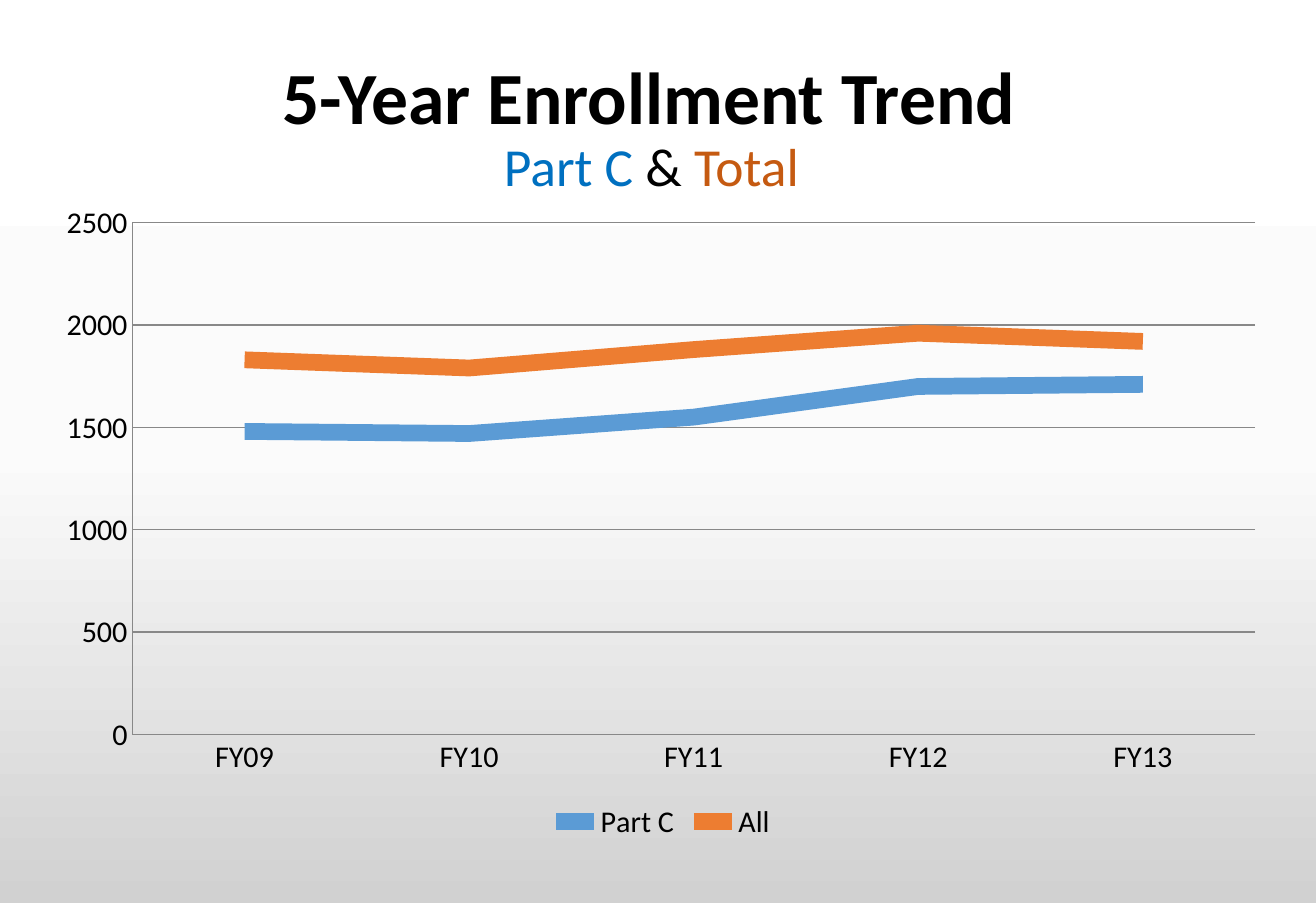
from copy import deepcopy

from lxml.etree import SubElement
from pptx import Presentation
from pptx.chart.data import CategoryChartData
from pptx.dml.color import RGBColor
from pptx.enum.chart import XL_CHART_TYPE, XL_LEGEND_POSITION, XL_MARKER_STYLE, XL_TICK_MARK
from pptx.enum.text import MSO_ANCHOR, MSO_AUTO_SIZE, PP_ALIGN
from pptx.oxml import parse_xml
from pptx.oxml.ns import nsdecls, qn
from pptx.util import Pt

PX = 7595
FONT = "Calibri"
BLACK = RGBColor(0x00, 0x00, 0x00)
GRAY = RGBColor(0x88, 0x88, 0x88)
PART_C_TEXT = RGBColor(0x00, 0x70, 0xC0)
TOTAL_TEXT = RGBColor(0xC5, 0x5A, 0x11)
BLUE = RGBColor(0x5B, 0x9B, 0xD5)
ORANGE = RGBColor(0xED, 0x7D, 0x31)
BACKGROUND = [
    (0, RGBColor(0xFF, 0xFF, 0xFF)),
    (0.5, RGBColor(0xFB, 0xFB, 0xFB)),
    (1, RGBColor(0xD1, 0xD1, 0xD1)),
]
YEARS = ["FY09", "FY10", "FY11", "FY12", "FY13"]
SERIES = [
    ("Part C", [1480, 1470, 1550, 1700, 1710], BLUE),
    ("All", [1830, 1790, 1880, 1960, 1920], ORANGE),
]
TITLE_RUNS = [
    ("5-Year Enrollment Trend ", 44, True, BLACK),
    ("Part C ", 32, False, PART_C_TEXT),
    ("&", 32, False, BLACK),
    (" Total ", 32, False, TOTAL_TEXT),
]


def px(*lengths):
    """Turn pixel lengths into EMU."""
    return [n * PX for n in lengths]


def set_background(s):
    """Fill the slide with a vertical gradient."""
    fill = s.background.fill
    fill.gradient()
    fill.gradient_angle = 270
    stops = s.element.find(".//" + qn("a:gsLst"))
    stops.append(deepcopy(stops[0]))
    for stop, (position, color) in zip(fill.gradient_stops, BACKGROUND):
        stop.position = position
        stop.color.rgb = color


def set_title(s):
    """Write the heading and its coloured second line."""
    sp = s.shapes.title
    sp.left, sp.top, sp.width, sp.height = px(90, 42, 1135, 175)
    tf = sp.text_frame
    tf.auto_size = MSO_AUTO_SIZE.NONE
    tf.vertical_anchor = MSO_ANCHOR.MIDDLE
    p = tf.paragraphs[0]
    p.alignment = PP_ALIGN.CENTER
    p.line_spacing = 0.9
    for i, (text, size, bold, color) in enumerate(TITLE_RUNS):
        if i == 1:
            p.add_line_break()
        r = p.add_run()
        r.text = text
        r.font.name = FONT
        r.font.size = Pt(size)
        r.font.bold = bold
        r.font.color.rgb = color


def place_plot(chart, **fractions):
    """Fix the inner plot area as fractions of the chart."""
    plot_area = chart.element.find(".//" + qn("c:plotArea"))
    for old in plot_area.findall(qn("c:layout")):
        plot_area.remove(old)
    layout = parse_xml(f"<c:layout {nsdecls('c')}><c:manualLayout/></c:layout>")
    settings = {"layoutTarget": "inner", "xMode": "edge", "yMode": "edge", **fractions}
    for name, value in settings.items():
        SubElement(layout[0], qn(f"c:{name}")).set("val", str(value))
    plot_area.insert(0, layout)


def style_axis(axis):
    """Draw an axis as a thin grey line without ticks."""
    axis.major_tick_mark = XL_TICK_MARK.NONE
    axis.minor_tick_mark = XL_TICK_MARK.NONE
    axis.format.line.color.rgb = GRAY
    axis.format.line.width = Pt(0.75)


def add_enrollment_chart(s):
    """Add the line chart of both enrollment counts."""
    data = CategoryChartData()
    data.categories = YEARS
    for name, values, _ in SERIES:
        data.add_series(name, values)
    frame = s.shapes.add_chart(XL_CHART_TYPE.LINE, *px(46, 190, 1234, 656), data)
    chart = frame.chart
    chart.font.name = FONT
    chart.font.size = Pt(18)
    chart.font.color.rgb = BLACK
    chart.has_title = False
    chart.has_legend = True
    chart.legend.position = XL_LEGEND_POSITION.BOTTOM
    chart.legend.include_in_layout = False
    chart.plots[0].vary_by_categories = False
    for series, (_, _, color) in zip(chart.plots[0].series, SERIES):
        series.smooth = False
        series.marker.style = XL_MARKER_STYLE.NONE
        series.format.line.color.rgb = color
        series.format.line.width = Pt(10)
    style_axis(chart.category_axis)
    axis = chart.value_axis
    style_axis(axis)
    axis.minimum_scale = 0
    axis.maximum_scale = 2500
    axis.major_unit = 500
    axis.has_major_gridlines = True
    axis.major_gridlines.format.line.color.rgb = GRAY
    axis.major_gridlines.format.line.width = Pt(0.75)
    place_plot(chart, x=0.07, y=0.05, w=0.91, h=0.78)


def main():
    """Build and save the enrollment slide."""
    prs = Presentation()
    prs.slide_width, prs.slide_height = px(1316, 903)
    s = prs.slides.add_slide(prs.slide_layouts[5])
    set_background(s)
    set_title(s)
    add_enrollment_chart(s)
    prs.save("out.pptx")


if __name__ == "__main__":
    main()
